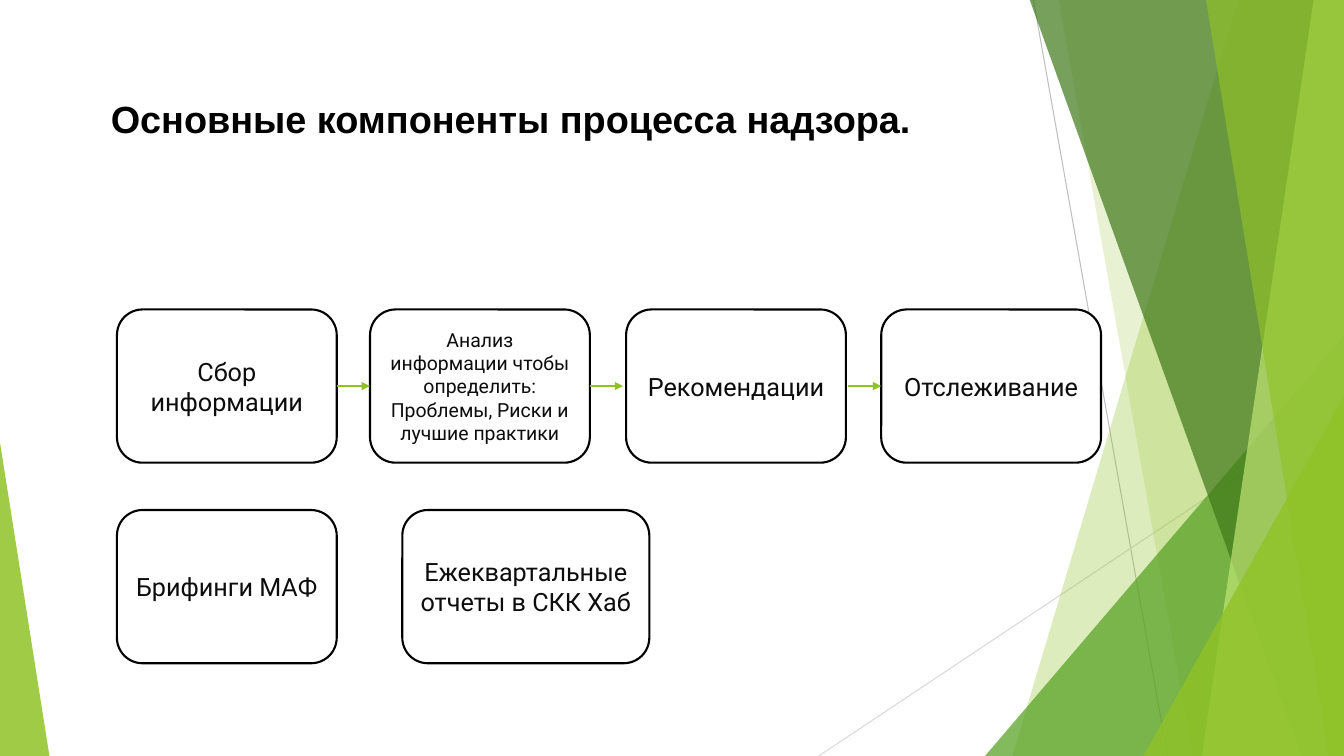
from lxml.etree import SubElement
from pptx import Presentation
from pptx.dml.color import RGBColor
from pptx.enum.shapes import MSO_CONNECTOR, MSO_SHAPE
from pptx.enum.text import MSO_ANCHOR, PP_ALIGN
from pptx.oxml.ns import qn
from pptx.util import Inches, Pt

THEME = {
    "lime": "90C226", "green": "54A021", "dark": "3F7819", "pale": "C0E474",
    "gray": "BFBFBF", "mist": "D9D9D9", "white": "FFFFFF",
    "black": "000000", "ink": "0D0D0D",
    "head": ("Arial", 27), "body": ("Roboto", 18), "small": ("Roboto", 13.9),
}
WIDE, HIGH = 13.33, 7.5

# Content
TITLE = "Основные компоненты процесса надзора."
# Text, left, top, width, type
BOXES = [
    ("Сбор информации", 1.16, 3.07, 2.18, "body"),
    ("Анализ информации чтобы определить: Проблемы, Риски и лучшие практики",
     3.67, 3.07, 2.18, "small"),
    ("Рекомендации", 6.21, 3.07, 2.18, "body"),
    ("Отслеживание", 8.74, 3.07, 2.18, "body"),
    ("Брифинги МАФ", 1.16, 5.06, 2.18, "body"),
    ("Ежеквартальные отчеты в СКК Хаб", 3.99, 5.06, 2.45, "body"),
]
BOX_H = 1.52
ARROWS = [3.34, 5.85, 8.41]
ARROW_W = 0.33

# Backdrop: thin lines, then bands (top left, bottom left, colour, opacity)
# and wedges (left, top, width, apex, colour, opacity)
RAYS = [((10.25, 0), (11.58, HIGH), "gray"), ((WIDE, 4.03), (8.12, HIGH), "mist")]
DECOR = [
    ("band", 12.28, 10.04, "lime", 30),
    ("band", 10.5, 11.83, "lime", 20),
    ("wedge", 9.77, 3.33, 3.56, 1, "green", 72),
    ("band", 10.21, 12.91, "dark", 70),
    ("band", 13.03, 11.92, "pale", 70),
    ("band", 11.96, 13.18, "lime", 65),
    ("wedge", 11.34, 3.93, 1.99, 1, "lime", 80),
    ("wedge", 0, 4.39, 0.49, 0, "lime", 85),
]

deck = Presentation()
deck.slide_width, deck.slide_height = Inches(WIDE), Inches(HIGH)
slide = deck.slides.add_slide(deck.slide_layouts[6])
shapes = slide.shapes


def tint(name):
    return RGBColor.from_string(THEME[name])


def paint(shape, name, alpha=100):
    shape.shadow.inherit = False
    shape.fill.solid()
    shape.fill.fore_color.rgb = tint(name)
    shape.line.fill.background()
    if alpha < 100:
        color = shape.fill._xPr.find(qn("a:solidFill"))[0]
        SubElement(color, qn("a:alpha")).set("val", str(alpha * 1000))


def draw_line(start, end, name, width, arrow=False):
    points = [Inches(v) for v in (*start, *end)]
    line = shapes.add_connector(MSO_CONNECTOR.STRAIGHT, *points)
    line.line.color.rgb = tint(name)
    line.line.width = Pt(width)
    if arrow:
        SubElement(line.line._ln, qn("a:tailEnd")).set("type", "triangle")
    SubElement(line._element.spPr, qn("a:effectLst"))


def band(top, foot, name, alpha):
    pen = shapes.build_freeform(Inches(top), Inches(-0.01))
    ends = [(WIDE, -0.01), (WIDE, HIGH), (foot, HIGH)]
    pen.add_line_segments([(Inches(x), Inches(y)) for x, y in ends], close=True)
    paint(pen.convert_to_shape(), name, alpha)


def wedge(left, top, width, apex, name, alpha):
    shape = shapes.add_shape(
        MSO_SHAPE.ISOSCELES_TRIANGLE, Inches(left), Inches(top),
        Inches(width), Inches(HIGH - top))
    shape.adjustments[0] = apex
    paint(shape, name, alpha)


def write(shape, text, style, name, bold=False):
    frame = shape.text_frame
    frame.word_wrap = True
    run = frame.paragraphs[0].add_run()
    run.text = text
    face, size = THEME[style]
    run.font.name, run.font.size = face, Pt(size)
    run.font.bold = bold
    run.font.color.rgb = tint(name)
    return frame


# Backdrop
for start, end, name in RAYS:
    draw_line(start, end, name, 0.75)
for kind, *data in DECOR:
    (band if kind == "band" else wedge)(*data)

# Title
head = shapes.add_textbox(Inches(1), Inches(0.9), Inches(10.42), Inches(0.95))
write(head, TITLE, "head", "black", bold=True)

# Boxes
for text, left, top, width, style in BOXES:
    box = shapes.add_shape(
        MSO_SHAPE.ROUNDED_RECTANGLE, Inches(left), Inches(top),
        Inches(width), Inches(BOX_H))
    paint(box, "white")
    box.line.color.rgb = tint("black")
    box.line.width = Pt(1.5)
    frame = write(box, text, style, "ink")
    frame.vertical_anchor = MSO_ANCHOR.MIDDLE
    frame.paragraphs[0].alignment = PP_ALIGN.CENTER

# Arrows run along the middle of the top row
mid = BOXES[0][2] + BOX_H / 2
for left in ARROWS:
    draw_line((left, mid), (left + ARROW_W, mid), "lime", 1, arrow=True)

deck.save("out.pptx")
